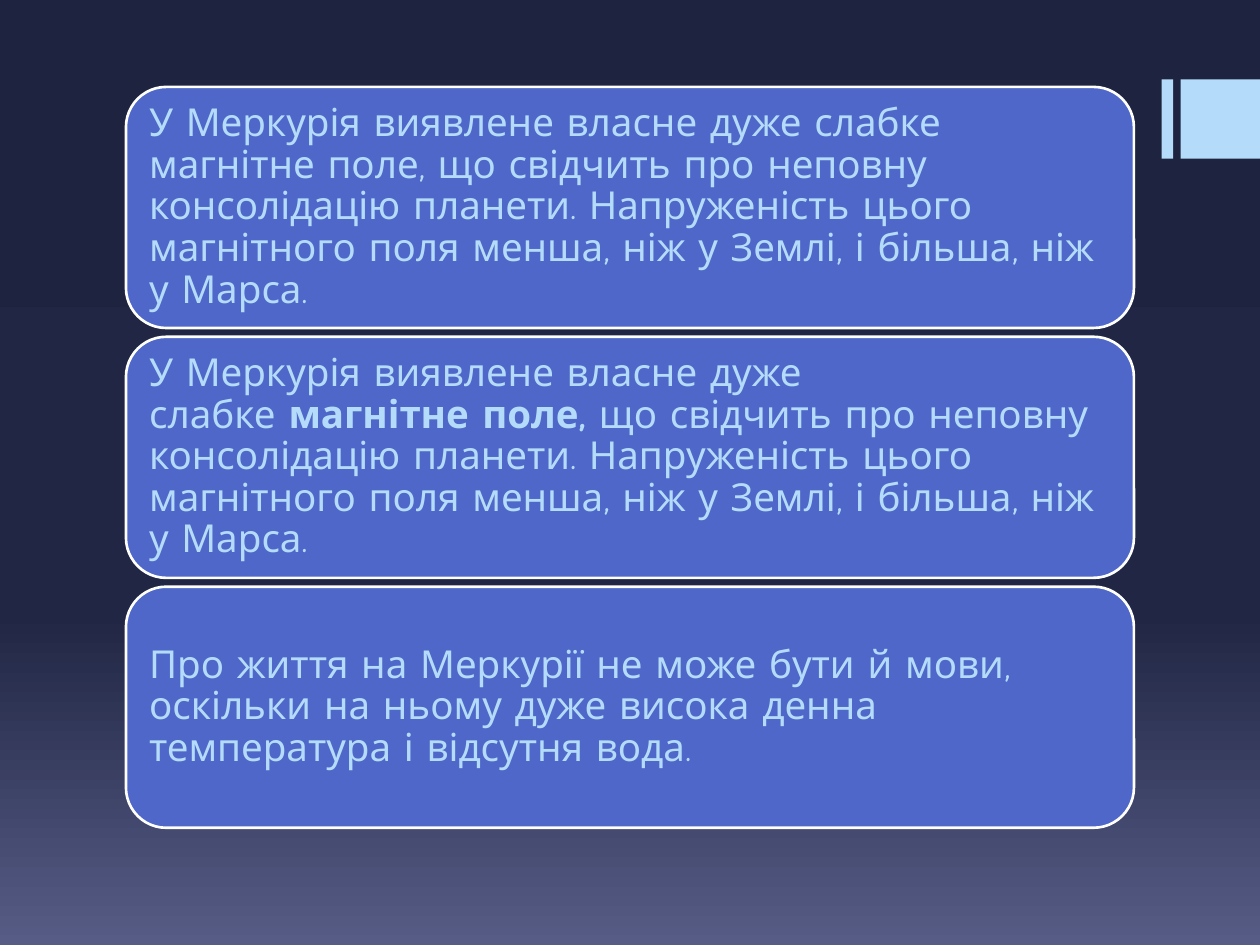
from copy import deepcopy
from dataclasses import dataclass

from pptx import Presentation
from pptx.dml.color import RGBColor
from pptx.enum.shapes import MSO_SHAPE
from pptx.enum.text import MSO_ANCHOR, PP_ALIGN
from pptx.oxml.ns import qn
from pptx.util import Inches, Pt


@dataclass(frozen=True)
class Theme:
    font: str = "Comic Neue"
    body_size: int = 22
    accent: str = "B4DCFA"
    panel: str = "4E67C8"
    outline: str = "FFFFFF"
    backdrop: tuple = ((0, "1E233F"), (0.65, "202643"), (1, "575C86"))


THEME = Theme()
NBSP = chr(160)

# Each panel is a list of (text, bold) runs.
FACTS = [
    [("У Меркурія виявлене власне дуже слабке магнітне поле, що свідчить "
      "про неповну консолідацію планети. Напруженість цього магнітного поля "
      "менша, ніж у Землі, і більша, ніж у Марса.", False)],
    [(f"У Меркурія виявлене власне дуже слабке{NBSP}", False),
     ("магнітне поле,", True),
     (f"{NBSP}що свідчить про неповну консолідацію планети. Напруженість "
      f"цього магнітного поля менша, ніж у Землі, і більша, ніж у Марса.{NBSP}",
      False)],
    [("Про життя на Меркурії не може бути й мови, оскільки на ньому дуже "
      "висока денна температура і відсутня вода.", False)],
]


def rgb(code):
    return RGBColor.from_string(code)


def add_filled(s, kind, left, top, width, height, color):
    sp = s.shapes.add_shape(kind, Inches(left), Inches(top),
                            Inches(width), Inches(height))
    sp.shadow.inherit = False
    sp.fill.solid()
    sp.fill.fore_color.rgb = rgb(color)
    sp.line.fill.background()
    return sp


def paint_background(s):
    fill = s.background.fill
    fill.gradient()
    fill.gradient_angle = 270
    stops = s.background._cSld.find(".//" + qn("a:gsLst"))
    stops.insert(1, deepcopy(stops[0]))
    for stop, (position, color) in zip(fill.gradient_stops, THEME.backdrop):
        stop.position = position
        stop.color.rgb = rgb(color)


def add_corner_mark(s, left, top, size):
    """Narrow bar followed by a square."""
    bar, gap = 0.09, 0.06
    for x, width in ((left, bar), (left + bar + gap, size)):
        add_filled(s, MSO_SHAPE.RECTANGLE, x, top, width, size, THEME.accent)


def add_panel(s, left, top, width, height, runs):
    sp = add_filled(s, MSO_SHAPE.ROUNDED_RECTANGLE, left, top, width, height,
                    THEME.panel)
    sp.line.color.rgb = rgb(THEME.outline)
    sp.line.width = Pt(1.5)
    tf = sp.text_frame
    tf.word_wrap = True
    tf.vertical_anchor = MSO_ANCHOR.MIDDLE
    tf.margin_left = tf.margin_right = Inches(0.09)
    tf.margin_top = tf.margin_bottom = Inches(0.09)
    p = tf.paragraphs[0]
    p.alignment = PP_ALIGN.LEFT
    p.line_spacing = 0.9
    for text, bold in runs:
        r = p.add_run()
        r.text = text
        r.font.name = THEME.font
        r.font.size = Pt(THEME.body_size)
        r.font.bold = bold
        r.font.color.rgb = rgb(THEME.accent)


def add_panel_stack(s, left, top, width, height, facts, gap=0.07):
    panel_height = (height - gap * (len(facts) - 1)) / len(facts)
    for i, runs in enumerate(facts):
        add_panel(s, left, top + i * (panel_height + gap), width,
                  panel_height, runs)


def main():
    prs = Presentation()
    prs.slide_width, prs.slide_height = Inches(10), Inches(7.5)
    s = prs.slides.add_slide(prs.slide_layouts[6])
    paint_background(s)
    add_corner_mark(s, 9.22, 0.63, 0.63)
    add_panel_stack(s, 1, 0.69, 8, 5.88, FACTS)
    prs.save("out.pptx")


if __name__ == "__main__":
    main()
